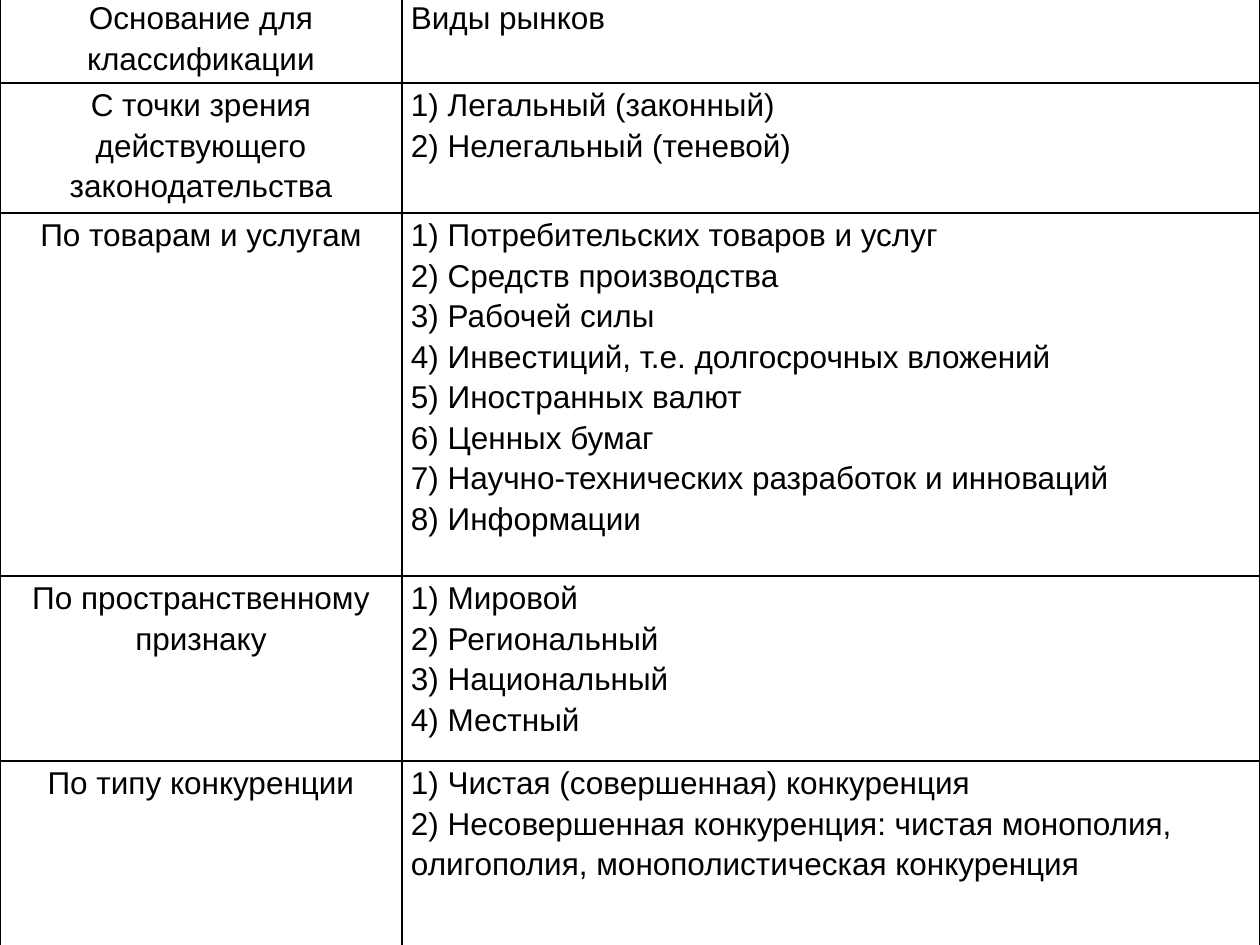
from dataclasses import dataclass

from lxml.etree import SubElement
from pptx import Presentation
from pptx.dml.color import RGBColor
from pptx.enum.text import MSO_ANCHOR, PP_ALIGN
from pptx.oxml.ns import qn
from pptx.util import Emu, Pt


@dataclass(frozen=True)
class Theme:
    font: str = "Arial"
    text_size: int = 18
    text_color: str = "000000"
    border_color: str = "000000"
    border_width: int = 1
    background: str = "FFFFFF"
    line_spacing: float = 1.15


THEME = Theme()
PX_PER_INCH = 126
SLIDE_WIDTH, SLIDE_HEIGHT = 1260, 945
TABLE_TOP = -4
COLUMN_WIDTHS = (402, 858)
ROW_HEIGHTS = (87, 130, 363, 185, 197)
SIDE_MARGIN = 9

HEADER = ("Основание для классификации", "Виды рынков")
MARKETS = (
    ("С точки зрения действующего законодательства",
     ("Легальный (законный)", "Нелегальный (теневой)")),
    ("По товарам и услугам",
     ("Потребительских товаров и услуг",
      "Средств производства",
      "Рабочей силы",
      "Инвестиций, т.е. долгосрочных вложений",
      "Иностранных валют",
      "Ценных бумаг",
      "Научно-технических разработок и инноваций",
      "Информации")),
    ("По пространственному признаку",
     ("Мировой", "Региональный", "Национальный", "Местный")),
    ("По типу конкуренции",
     ("Чистая (совершенная) конкуренция",
      "Несовершенная конкуренция: чистая монополия, "
      "олигополия, монополистическая конкуренция")),
)


def px(length):
    return Emu(round(length * 914400 / PX_PER_INCH))


def numbered(items):
    return "\n".join(f"{number}) {item}" for number, item in enumerate(items, 1))


def add_borders(cell):
    properties = cell._tc.get_or_add_tcPr()
    for side in ("lnL", "lnR", "lnT", "lnB"):
        line = SubElement(properties, qn(f"a:{side}"), w=str(Pt(THEME.border_width)))
        fill = SubElement(line, qn("a:solidFill"))
        SubElement(fill, qn("a:srgbClr"), val=THEME.border_color)


def fill_cell(cell, text, alignment):
    add_borders(cell)
    cell.fill.background()
    cell.margin_left = cell.margin_right = px(SIDE_MARGIN)
    cell.margin_top = cell.margin_bottom = 0
    cell.vertical_anchor = MSO_ANCHOR.TOP
    cell.text_frame.text = text
    for paragraph in cell.text_frame.paragraphs:
        paragraph.alignment = alignment
        paragraph.line_spacing = THEME.line_spacing
        for run in paragraph.runs:
            run.font.name = THEME.font
            run.font.size = Pt(THEME.text_size)
            run.font.bold = False
            run.font.color.rgb = RGBColor.from_string(THEME.text_color)


def add_market_table(slide):
    rows = [HEADER] + [(basis, numbered(kinds)) for basis, kinds in MARKETS]
    table = slide.shapes.add_table(
        len(rows), len(COLUMN_WIDTHS), 0, px(TABLE_TOP),
        px(sum(COLUMN_WIDTHS)), px(sum(ROW_HEIGHTS))).table
    table.first_row = table.horz_banding = False

    for column, width in zip(table.columns, COLUMN_WIDTHS):
        column.width = px(width)
    for row, height, (basis, kinds) in zip(table.rows, ROW_HEIGHTS, rows):
        row.height = px(height)
        fill_cell(row.cells[0], basis, PP_ALIGN.CENTER)
        fill_cell(row.cells[1], kinds, PP_ALIGN.LEFT)

    # The header of the second column is justified
    table.cell(0, 1).text_frame.paragraphs[0].alignment = PP_ALIGN.JUSTIFY


def main():
    presentation = Presentation()
    presentation.slide_width = px(SLIDE_WIDTH)
    presentation.slide_height = px(SLIDE_HEIGHT)
    slide = presentation.slides.add_slide(presentation.slide_layouts[6])

    # Background
    slide.background.fill.solid()
    slide.background.fill.fore_color.rgb = RGBColor.from_string(THEME.background)

    # Classification of markets
    add_market_table(slide)
    presentation.save("out.pptx")


if __name__ == "__main__":
    main()
